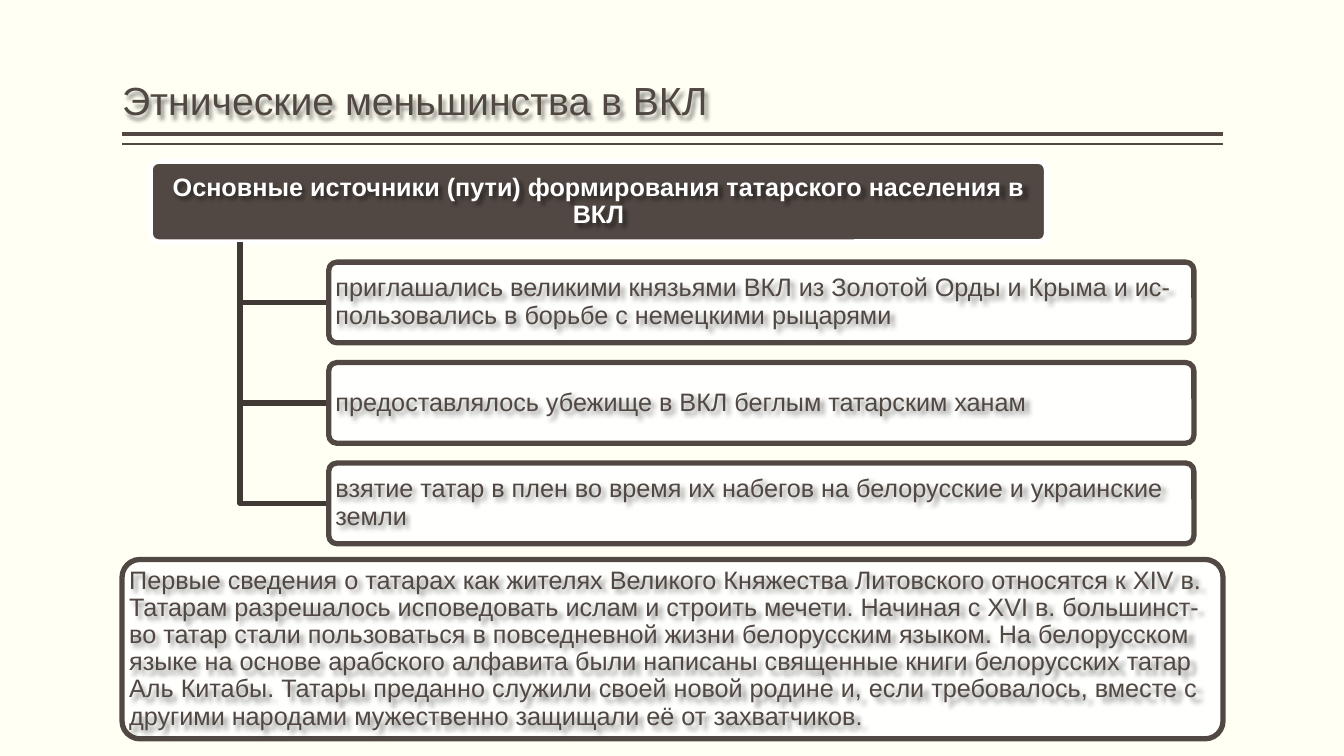
"""Slide on how the Tatar population of the Grand Duchy of Lithuania was formed."""
from lxml import etree
from pptx import Presentation, util as u
from pptx.dml.color import RGBColor
from pptx.enum import shapes as sh, text as tx
from pptx.oxml import ns, parse_xml

DARK = RGBColor(0x51, 0x48, 0x43)
STEM = RGBColor(0x40, 0x39, 0x34)
WHITE = RGBColor(0xFF, 0xFF, 0xFF)
CREAM = RGBColor(0xFF, 0xFF, 0xF3)
THICK = u.Pt(3.78)
SHADE = (
    f'<a:effectLst {ns.nsdecls("a")}>'
    '<a:outerShdw blurRad="38100" dist="38100" dir="2700000" algn="tl">'
    '<a:srgbClr val="000000"><a:alpha val="43000"/></a:srgbClr>'
    '</a:outerShdw></a:effectLst>'
)

deck = Presentation()
deck.slide_width, deck.slide_height = u.Inches(13.33), u.Inches(7.5)
col, row = deck.slide_width / 100, deck.slide_height / 100
slide = deck.slides.add_slide(deck.slide_layouts[6])
slide.background.fill.solid()
slide.background.fill.fore_color.rgb = CREAM
parts = slide.shapes


def label(words, x, y, w, h, size=18, ink=DARK, bold=False, side=0.04, edge=0.02,
          hold=tx.MSO_ANCHOR.MIDDLE, align=tx.PP_ALIGN.LEFT):
    box = parts.add_textbox(int(x * col), int(y * row), int(w * col), int(h * row))
    box.element.spPr.append(parse_xml(SHADE))
    frame = box.text_frame
    frame.word_wrap = True
    frame.vertical_anchor = hold
    frame.margin_left = frame.margin_right = u.Inches(side)
    frame.margin_top = frame.margin_bottom = u.Inches(edge)
    frame.text = words
    par = frame.paragraphs[0]
    par.alignment, par.line_spacing = align, 0.9
    font = par.runs[0].font
    font.name, font.size, font.bold = "Arial", u.Pt(size), bold
    font.color.rgb = ink


def card(x, y, w, h, fill=WHITE, line=DARK):
    box = parts.add_shape(sh.MSO_SHAPE.ROUNDED_RECTANGLE,
                          int(x * col), int(y * row), int(w * col), int(h * row))
    box.adjustments[0] = 0.1
    box.shadow.inherit = False
    box.fill.solid()
    box.fill.fore_color.rgb = fill
    box.line.color.rgb, box.line.width = line, THICK
    if fill == WHITE:
        tint = box.element.spPr.find(ns.qn("a:solidFill"))[0]
        etree.SubElement(tint, ns.qn("a:alpha")).set("val", "90000")


left, wide = 9.08, 81.92
for y, width in ((17.73, 3), (19.07, 1)):
    rule = parts.add_connector(sh.MSO_CONNECTOR.STRAIGHT, int((left + wide) * col),
                               int(y * row), int(left * col), int(y * row))
    rule.line.color.rgb, rule.line.width = DARK, u.Pt(width)
    etree.SubElement(rule.element.spPr, ns.qn("a:effectLst"))
label("Этнические меньшинства в ВКЛ", left, 1.07, wide, 16, size=28,
      side=0, edge=0.05, hold=tx.MSO_ANCHOR.BOTTOM)

story = (
    "Первые сведения о татарах как жителях Великого Княжества Литовского "
    "относятся к XIV в. Татарам разрешалось исповедовать ислам и строить мечети. "
    "Начиная с XVI в. большинст- во татар стали пользоваться в повседневной жизни "
    "белорусским языком. На белорусском языке на основе арабского алфавита были "
    "написаны священные книги белорусских татар Аль Китабы. Татары преданно служили "
    "своей новой родине и, если требовалось, вместе с другими народами мужественно "
    "защищали её от захватчиков."
)
card(left, 74, wide, 23.73)
label(story, left + 0.23, 74.67, wide - 0.46, 22.33)

high, padx, pady = 10.67, 0.2, 0.3
head, top = 11.18, 21.33
card(head, top, 66.69, high, DARK, WHITE)
label("Основные источники (пути) формирования татарского населения в ВКЛ",
      head + padx, top + pady, 66.69 - 2 * padx, high - 2 * pady,
      ink=WHITE, bold=True, align=tx.PP_ALIGN.CENTER)

ways = (
    "приглашались великими князьями ВКЛ из Золотой Орды и Крыма и ис- "
    "пользовались в борьбе с немецкими рыцарями",
    "предоставлялось убежище в ВКЛ беглым татарским ханам",
    "взятие татар в плен во время их набегов на белорусские и украинские земли",
)
stem, leaf, span = 17.85, 24.46, 64.37
for i, way in enumerate(ways):
    y = 34.67 + 13.29 * i
    mid = int((y + high / 2) * row)
    path = parts.build_freeform(int(stem * col), int((top + high) * row))
    path.add_line_segments([(int(stem * col), mid), (int(leaf * col), mid)], close=False)
    branch = path.convert_to_shape()
    branch.shadow.inherit = False
    branch.fill.background()
    branch.line.color.rgb, branch.line.width = STEM, THICK
    card(leaf, y, span, high)
    label(way, leaf + padx, y + pady, span - 2 * padx, high - 2 * pady)

deck.save("out.pptx")
